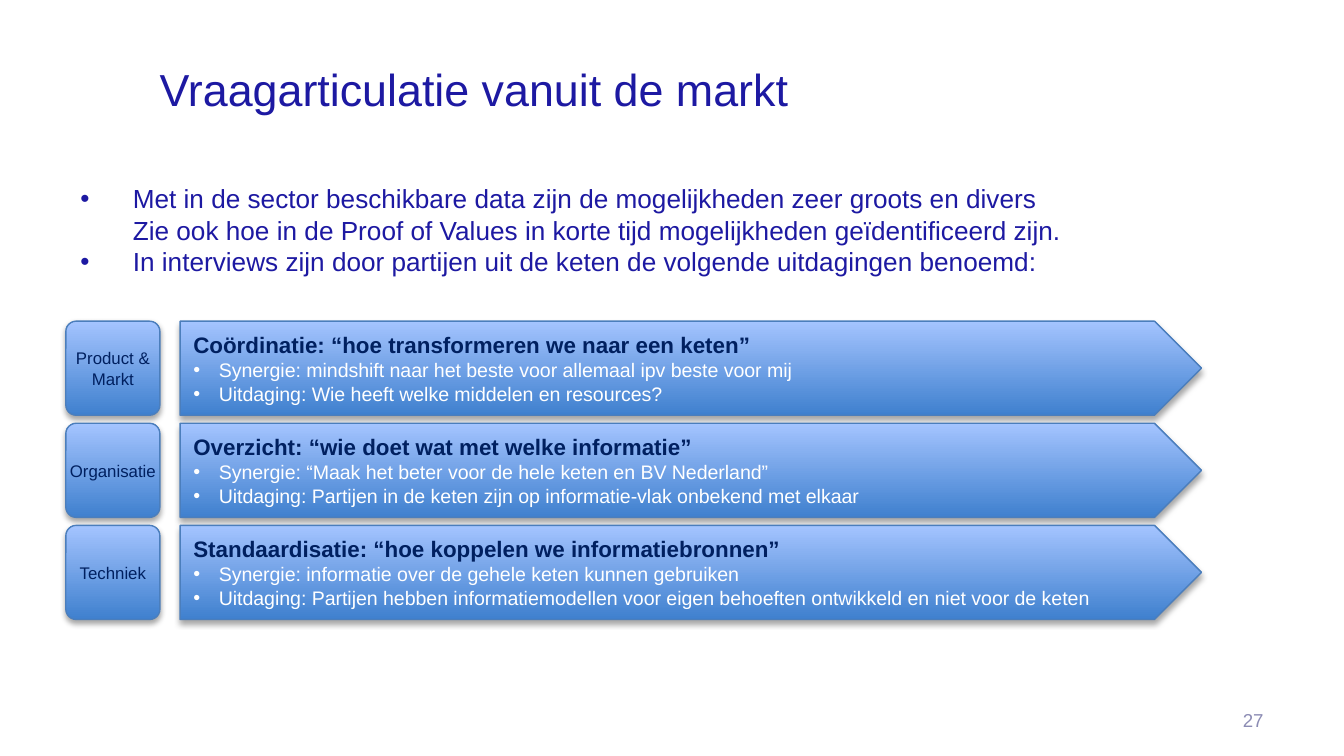
from copy import deepcopy

from lxml.etree import SubElement
from pptx import Presentation
from pptx.dml.color import RGBColor
from pptx.enum.shapes import MSO_SHAPE
from pptx.enum.text import MSO_ANCHOR, PP_ALIGN
from pptx.oxml.ns import qn
from pptx.util import Inches, Pt

COLORS = {
    "blue": "1D19A2",
    "navy": "002060",
    "white": "FFFFFF",
    "number": "8C8CB4",
    "gradient_dark": "3F80CE",
    "gradient_light": "A4C4FF",
    "outline": "4B7EBC",
    "shadow": "000000",
}

INTRODUCTION = [
    "Met in de sector beschikbare data zijn de mogelijkheden zeer groots en divers\v"
    "Zie ook hoe in de Proof of Values in korte tijd mogelijkheden geïdentificeerd zijn.",
    "In interviews zijn door partijen uit de keten de volgende uitdagingen benoemd:",
]

CHALLENGES = [
    ("Product & Markt", "Coördinatie: “hoe transformeren we naar een keten”",
     ["Synergie: mindshift naar het beste voor allemaal ipv beste voor mij",
      "Uitdaging: Wie heeft welke middelen en resources?"]),
    ("Organisatie", "Overzicht: “wie doet wat met welke informatie”",
     ["Synergie: “Maak het beter voor de hele keten en BV Nederland”",
      "Uitdaging: Partijen in de keten zijn op informatie-vlak onbekend met elkaar"]),
    ("Techniek", "Standaardisatie: “hoe koppelen we informatiebronnen”",
     ["Synergie: informatie over de gehele keten kunnen gebruiken",
      "Uitdaging: Partijen hebben informatiemodellen voor eigen behoeften ontwikkeld "
      "en niet voor de keten"]),
]


def rgb(name):
    return RGBColor.from_string(COLORS[name])


def add_paragraph(frame, text, *, size, color, bold=False, align=PP_ALIGN.LEFT,
                  bullet_indent=None):
    first = frame.paragraphs[0]
    paragraph = frame.add_paragraph() if first.runs else first
    paragraph.text = text
    paragraph.alignment = align
    if bullet_indent:
        properties = paragraph._p.get_or_add_pPr()
        properties.set("marL", str(Inches(bullet_indent)))
        properties.set("indent", str(-Inches(bullet_indent)))
        SubElement(properties, qn("a:buFont"), typeface="Arial")
        SubElement(properties, qn("a:buChar"), char="•")
    for run in paragraph.runs:
        run.font.name = "Arial"
        run.font.size = Pt(size)
        run.font.bold = bold
        run.font.color.rgb = rgb(color)
    for line_break in paragraph._p.findall(qn("a:br")):
        line_break.insert(0, deepcopy(paragraph.runs[0]._r.rPr))


def add_text_frame(slide, left, top, width, height, anchor):
    box = slide.shapes.add_textbox(Inches(left), Inches(top), Inches(width), Inches(height))
    box.text_frame.word_wrap = True
    box.text_frame.vertical_anchor = anchor
    return box.text_frame


def add_shadow(shape):
    shape.shadow.inherit = False
    effects = shape._element.spPr.find(qn("a:effectLst"))
    shadow = SubElement(effects, qn("a:outerShdw"), blurRad=str(Pt(3.1)), dist=str(Pt(1.8)),
                        dir="5400000", rotWithShape="0")
    color = SubElement(shadow, qn("a:srgbClr"), val=COLORS["shadow"])
    SubElement(color, qn("a:alpha"), val="35000")


def add_gradient_shape(slide, kind, left, top, width, height):
    shape = slide.shapes.add_shape(kind, Inches(left), Inches(top), Inches(width), Inches(height))
    shape.fill.gradient()
    shape.fill.gradient_angle = 90
    for stop, color, position in zip(shape.fill.gradient_stops,
                                     ("gradient_dark", "gradient_light"), (0, 1)):
        stop.color.rgb = rgb(color)
        stop.position = position
    shape.line.color.rgb = rgb("outline")
    shape.line.width = Pt(0.75)
    add_shadow(shape)
    shape.text_frame.word_wrap = True
    shape.text_frame.vertical_anchor = MSO_ANCHOR.MIDDLE
    return shape


def add_title(slide, left, top, width, height):
    frame = add_text_frame(slide, left, top, width, height, MSO_ANCHOR.BOTTOM)
    add_paragraph(frame, "Vraagarticulatie vanuit de markt", size=24, color="blue")


def add_introduction(slide, left, top, width, height):
    frame = add_text_frame(slide, left, top, width, height, MSO_ANCHOR.TOP)
    for text in INTRODUCTION:
        add_paragraph(frame, text, size=14, color="blue", bullet_indent=0.39)


def add_challenge(slide, left, top, width, height, label, heading, points):
    tile = add_gradient_shape(slide, MSO_SHAPE.ROUNDED_RECTANGLE, left, top, height, height)
    tile.adjustments[0] = 0.11
    frame = tile.text_frame
    frame.margin_left = frame.margin_right = frame.margin_top = frame.margin_bottom = 0
    add_paragraph(frame, label, size=9, color="navy", align=PP_ALIGN.CENTER)

    offset = height + 0.15
    arrow = add_gradient_shape(slide, MSO_SHAPE.PENTAGON, left + offset, top,
                               width - offset, height)
    add_paragraph(arrow.text_frame, heading, size=12, color="navy", bold=True)
    for point in points:
        add_paragraph(arrow.text_frame, point, size=10.5, color="white", bullet_indent=0.19)


def add_challenges(slide, left, top, width, row_height, gap):
    for index, challenge in enumerate(CHALLENGES):
        add_challenge(slide, left, top + index * (row_height + gap), width, row_height, *challenge)


def add_slide_number(slide, left, top, width, height):
    frame = add_text_frame(slide, left, top, width, height, MSO_ANCHOR.MIDDLE)
    add_paragraph(frame, "27", size=10, color="number", align=PP_ALIGN.RIGHT)


def main():
    presentation = Presentation()
    presentation.slide_width = Inches(10)
    presentation.slide_height = Inches(10 * 9 / 16)
    slide = presentation.slides.add_slide(presentation.slide_layouts[6])
    add_title(slide, 1.09, 0.23, 8.41, 0.68)
    add_introduction(slide, 0.5, 1.31, 9, 3.71)
    add_slide_number(slide, 7.17, 5.21, 2.33, 0.3)
    add_challenges(slide, 0.49, 2.39, 8.45, row_height=0.7, gap=0.06)
    presentation.save("out.pptx")


if __name__ == "__main__":
    main()
